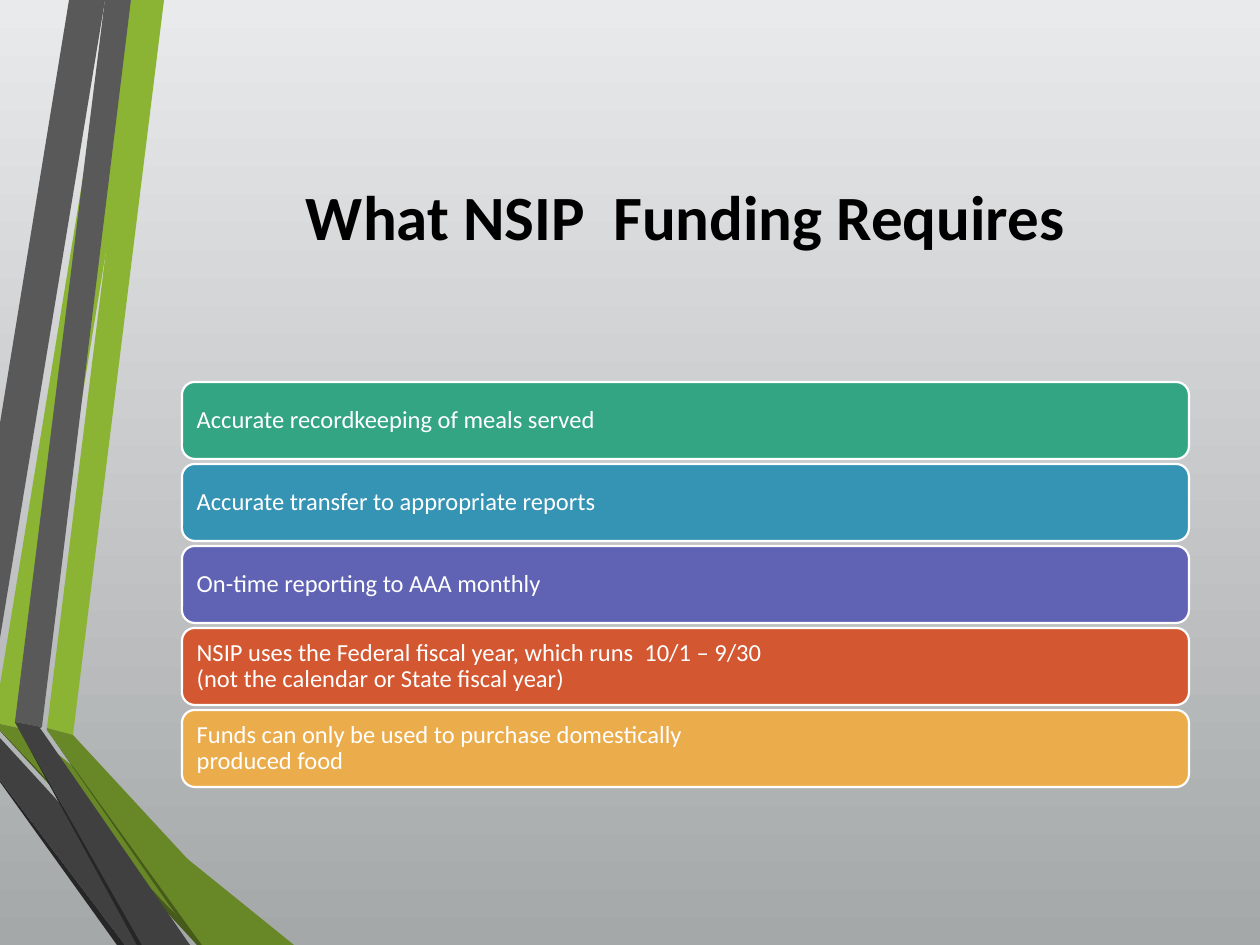
from pptx import Presentation, util as u
from pptx.dml.color import RGBColor
from pptx.enum import shapes, text

SCALE = 914400 / 126
FONT = "Calibri"
LIME, GREY, COAL, MOSS, OLIVE, SLATE = "8BB434", "595959", "262626", "465A1A", "688727", "404040"

RIBBONS = [
    (LIME, [(0, 685), (0, 724), (28, 730), (147, 0), (112, 0)]),
    (GREY, [(105, 0), (69, 0), (0, 423), (0, 638)]),
    (COAL, [(0, 780), (0, 782), (117, 945), (125, 945)]),
    (MOSS, [(0, 730), (0, 731), (197, 945), (205, 945)]),
    (OLIVE, [(0, 730), (205, 945), (294, 945), (28, 730), (0, 724)]),
    (SLATE, [(0, 780), (125, 945), (190, 945), (0, 738)]),
    (LIME, [(47, 728), (73, 735), (164, 0), (137, 0)]),
    (GREY, [(131, 0), (105, 0), (15, 722), (42, 727)]),
    (COAL, [(15, 722), (137, 945), (142, 945)]),
    (MOSS, [(47, 730), (197, 945), (202, 945)]),
    (OLIVE, [(47, 730), (202, 945), (267, 945), (73, 735), (47, 728)]),
    (SLATE, [(190, 945), (45, 735), (40, 728), (42, 727), (15, 722), (142, 945)]),
]

REQUIREMENTS = [
    ("33A583", ["Accurate recordkeeping of meals served"]),
    ("3594B4", ["Accurate transfer to appropriate reports"]),
    ("6063B4", ["On-time reporting to AAA monthly"]),
    ("D35731", ["NSIP uses the Federal fiscal year, which runs  10/1 – 9/30",
                "(not the calendar or State fiscal year)"]),
    ("EBAC4B", ["Funds can only be used to purchase domestically", "produced food"]),
]


def px(length):
    return u.Emu(round(length * SCALE))


def colour(value):
    return RGBColor.from_string(value)


class Page:
    """Holds the style and the current slide, and draws its elements."""

    def __init__(self, deck):
        self.page = deck.slides.add_slide(deck.slide_layouts[5])

    def background(self, top, bottom):
        fill = self.page.background.fill
        fill.gradient()
        fill.gradient_angle = 270
        for stop, value, position in zip(fill.gradient_stops, (top, bottom), (0, 1)):
            stop.color.rgb = colour(value)
            stop.position = position

    def ribbon(self, value, points):
        builder = self.page.shapes.build_freeform(*points[0], scale=SCALE)
        builder.add_line_segments(points[1:], close=True)
        shape = builder.convert_to_shape()
        shape.shadow.inherit = False
        shape.fill.solid()
        shape.fill.fore_color.rgb = colour(value)
        shape.line.fill.background()

    def label(self, box, lines, size, value, align, bold=False):
        frame = box.text_frame
        frame.word_wrap = True
        frame.auto_size = text.MSO_AUTO_SIZE.NONE
        frame.vertical_anchor = text.MSO_ANCHOR.MIDDLE
        para = frame.paragraphs[0]
        para.alignment = align
        para.line_spacing = 0.9
        for number, line in enumerate(lines):
            if number:
                para.add_line_break()
            span = para.add_run()
            span.text = line
            span.font.name = FONT
            span.font.size = u.Pt(size)
            span.font.bold = bold
            span.font.color.rgb = colour(value)

    def title(self, line, left, top, width, height):
        box = self.page.shapes.title
        box.left, box.top, box.width, box.height = map(px, (left, top, width, height))
        self.label(box, [line], 36, "000000", text.PP_ALIGN.CENTER, bold=True)
        box.text_frame.paragraphs[0].line_spacing = 1.0

    def bar(self, value, lines, left, top, width, height):
        box = self.page.shapes.add_shape(
            shapes.MSO_SHAPE.ROUNDED_RECTANGLE, *map(px, (left, top, width, height)))
        box.shadow.inherit = False
        box.fill.solid()
        box.fill.fore_color.rgb = colour(value)
        box.line.color.rgb = colour("FFFFFF")
        box.line.width = u.Pt(1.25)
        frame = box.text_frame
        frame.margin_left = frame.margin_right = px(11)
        frame.margin_top = frame.margin_bottom = px(8)
        self.label(box, lines, 14, "FFFFFF", text.PP_ALIGN.LEFT)


def main():
    deck = Presentation()
    deck.slide_width, deck.slide_height = px(1260), px(945)
    page = Page(deck)
    page.background("E9EAEB", "A5A8A9")
    for value, points in RIBBONS:
        page.ribbon(value, points)
    left, width = 182, 1007
    page.title("What NSIP  Funding Requires", left, 94, width, 242)
    for row, (value, lines) in enumerate(REQUIREMENTS):
        page.bar(value, lines, left, 382 + row * 82, width, 77)
    deck.save("out.pptx")


if __name__ == "__main__":
    main()
